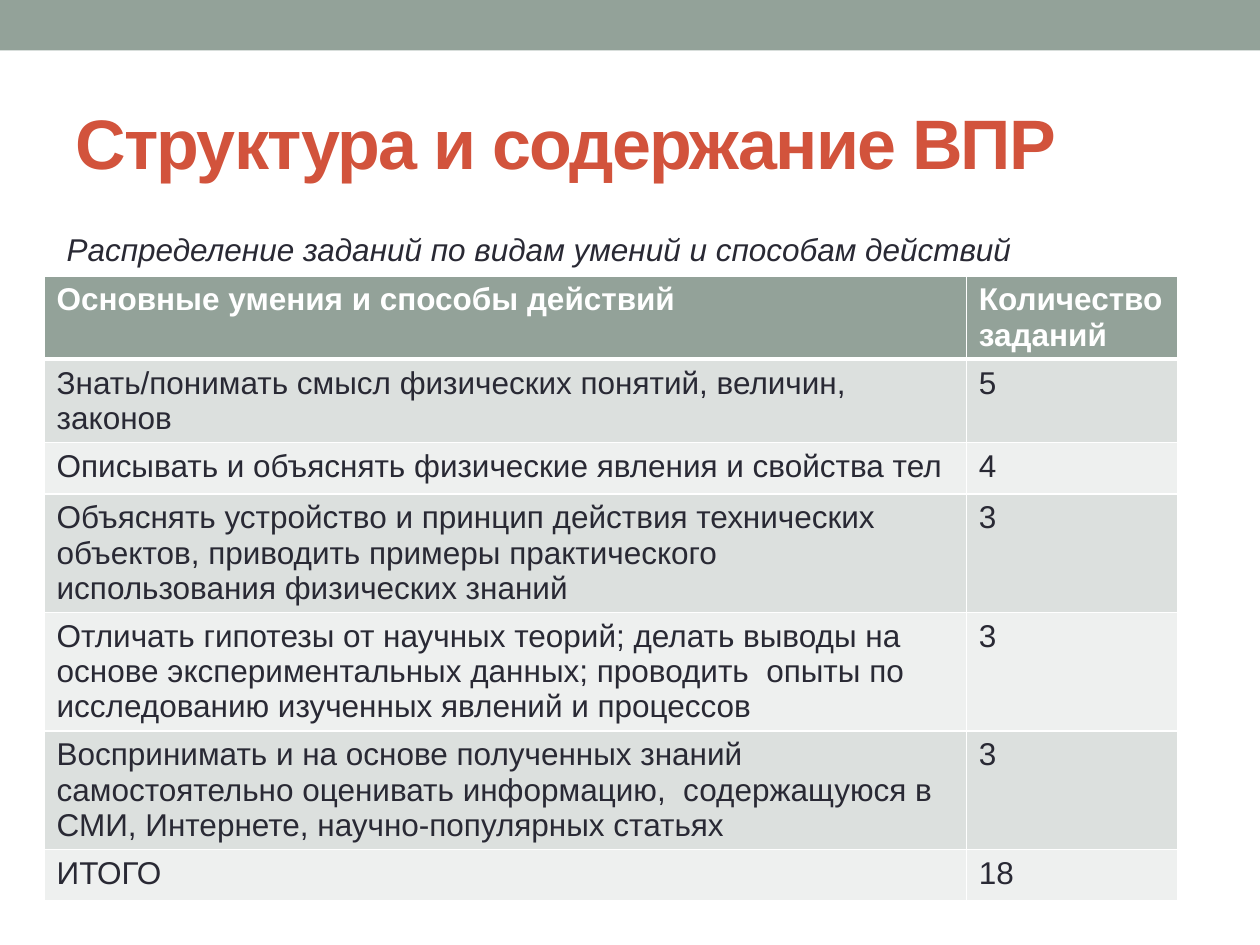
from dataclasses import dataclass

from lxml.etree import SubElement
from pptx import Presentation
from pptx.dml.color import RGBColor as Color
from pptx.enum.shapes import MSO_SHAPE as Shape
from pptx.enum.text import MSO_ANCHOR as Anchor, MSO_AUTO_SIZE as AutoSize, PP_ALIGN as Align
from pptx.oxml.ns import qn
from pptx.util import Inches, Pt


@dataclass(frozen=True)
class Theme:
    font: str = "Arial"
    accent: str = "93A299"
    heading: str = "D2533C"
    ink: str = "292934"
    white: str = "FFFFFF"
    bands: tuple = ("DCE0DE", "EEF0EF")
    title_size: int = 40
    body_size: int = 18
    line_height: float = 0.28
    cell_padding: float = 0.1
    least_row: float = 0.41


HEADER = ("Основные умения и способы действий", "Количество заданий", 2)
SKILLS = [
    ("Знать/понимать смысл физических понятий, величин,\nзаконов", "5", 2),
    ("Описывать и объяснять физические явления и свойства тел", "4", 1),
    ("Объяснять устройство и принцип действия технических\n"
     "объектов, приводить примеры практического  использования физических знаний", "3", 3),
    ("Отличать гипотезы от научных теорий; делать выводы на основе экспериментальных "
     "данных; проводить  опыты по исследованию изученных явлений и процессов", "3", 3),
    ("Воспринимать и на основе полученных знаний самостоятельно оценивать информацию,  "
     "содержащуюся в СМИ, Интернете, научно-популярных статьях", "3", 3),
    ("ИТОГО", "18", 1),
]


class SlideBuilder:
    """Holds the theme and the current page and adds elements to it."""

    def __init__(self, page, theme):
        self.page = page
        self.theme = theme

    def style(self, frame, size, color, bold=False, italic=False):
        for para in frame.paragraphs:
            para.alignment = Align.LEFT
            for span in para.runs:
                span.font.name = self.theme.font
                span.font.size = Pt(size)
                span.font.bold = bold
                span.font.italic = italic
                span.font.color.rgb = Color.from_string(color)

    def band(self, left, top, width, height):
        bar = self.page.shapes.add_shape(
            Shape.RECTANGLE, Inches(left), Inches(top), Inches(width), Inches(height))
        bar.shadow.inherit = False
        bar.fill.solid()
        bar.fill.fore_color.rgb = Color.from_string(self.theme.accent)
        bar.line.fill.background()

    def title(self, text, left, top, width, height):
        box = self.page.shapes.title
        box.left, box.top = Inches(left), Inches(top)
        box.width, box.height = Inches(width), Inches(height)
        frame = box.text_frame
        frame.text = text
        frame.auto_size = AutoSize.NONE
        frame.vertical_anchor = Anchor.MIDDLE
        self.style(frame, self.theme.title_size, self.theme.heading, bold=True)
        for span in frame.paragraphs[0].runs:
            span.font._element.set("spc", "-100")

    def caption(self, text, left, top, width, height):
        box = self.page.shapes.add_textbox(
            Inches(left), Inches(top), Inches(width), Inches(height))
        frame = box.text_frame
        frame.word_wrap = True
        frame.auto_size = AutoSize.SHAPE_TO_FIT_TEXT
        frame.text = text
        self.style(frame, self.theme.body_size, self.theme.ink, italic=True)

    def borders(self, cell, top=1, bottom=1):
        properties = cell._tc.get_or_add_tcPr()
        for side, width in (("L", 1), ("R", 1), ("T", top), ("B", bottom)):
            line = SubElement(properties, qn(f"a:ln{side}"), w=str(Pt(width)))
            fill = SubElement(line, qn("a:solidFill"))
            SubElement(fill, qn("a:srgbClr"), val=self.theme.white)

    def table(self, rows, left, top, widths):
        theme = self.theme
        heights = [max(theme.least_row, theme.cell_padding + lines * theme.line_height)
                   for *_, lines in rows]
        grid = self.page.shapes.add_table(
            len(rows), len(widths), Inches(left), Inches(top),
            Inches(sum(widths)), Inches(sum(heights))).table
        for column, width in zip(grid.columns, widths):
            column.width = Inches(width)
        for index, (*texts, _) in enumerate(rows):
            grid.rows[index].height = Inches(heights[index])
            is_header = index == 0
            fill = theme.accent if is_header else theme.bands[(index - 1) % 2]
            color = theme.white if is_header else theme.ink
            for cell, text in zip(grid.rows[index].cells, texts):
                cell.text = text
                self.style(cell.text_frame, theme.body_size, color, bold=is_header)
                self.borders(cell, top=3 if index == 1 else 1, bottom=3 if is_header else 1)
                cell.fill.solid()
                cell.fill.fore_color.rgb = Color.from_string(fill)


def main():
    deck = Presentation()
    deck.slide_width, deck.slide_height = Inches(10), Inches(7.5)
    builder = SlideBuilder(deck.slides.add_slide(deck.slide_layouts[5]), Theme())
    builder.band(0, 0, 10, 0.4)
    builder.title("Структура и содержание ВПР", 0.5, 0.58, 9, 1.08)
    builder.table([HEADER, *SKILLS], 0.35, 2.19, (7.32, 1.68))
    builder.caption("Распределение заданий по видам умений и способам действий",
                    0.43, 1.78, 9.21, 0.4)
    deck.save("out.pptx")


if __name__ == "__main__":
    main()
